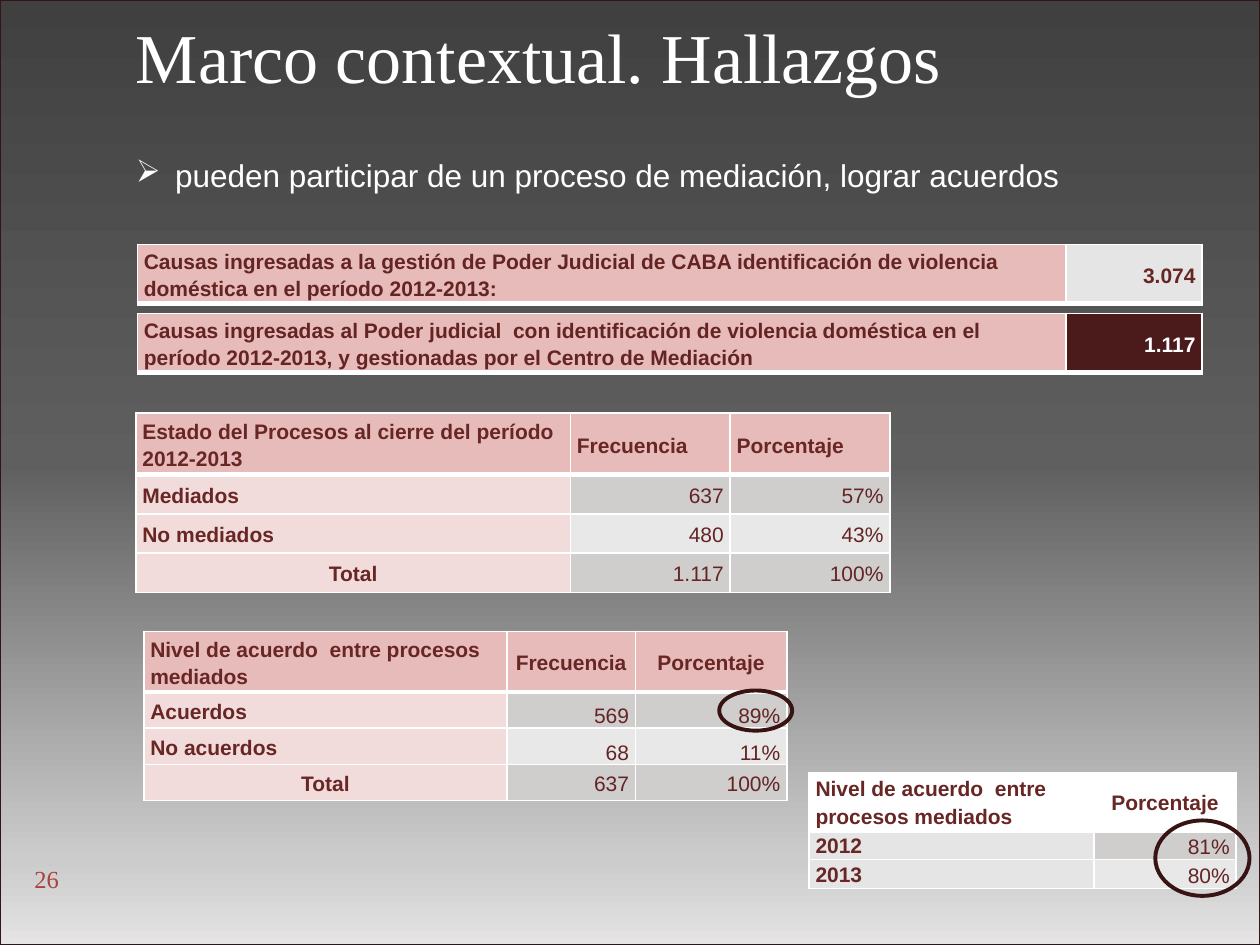
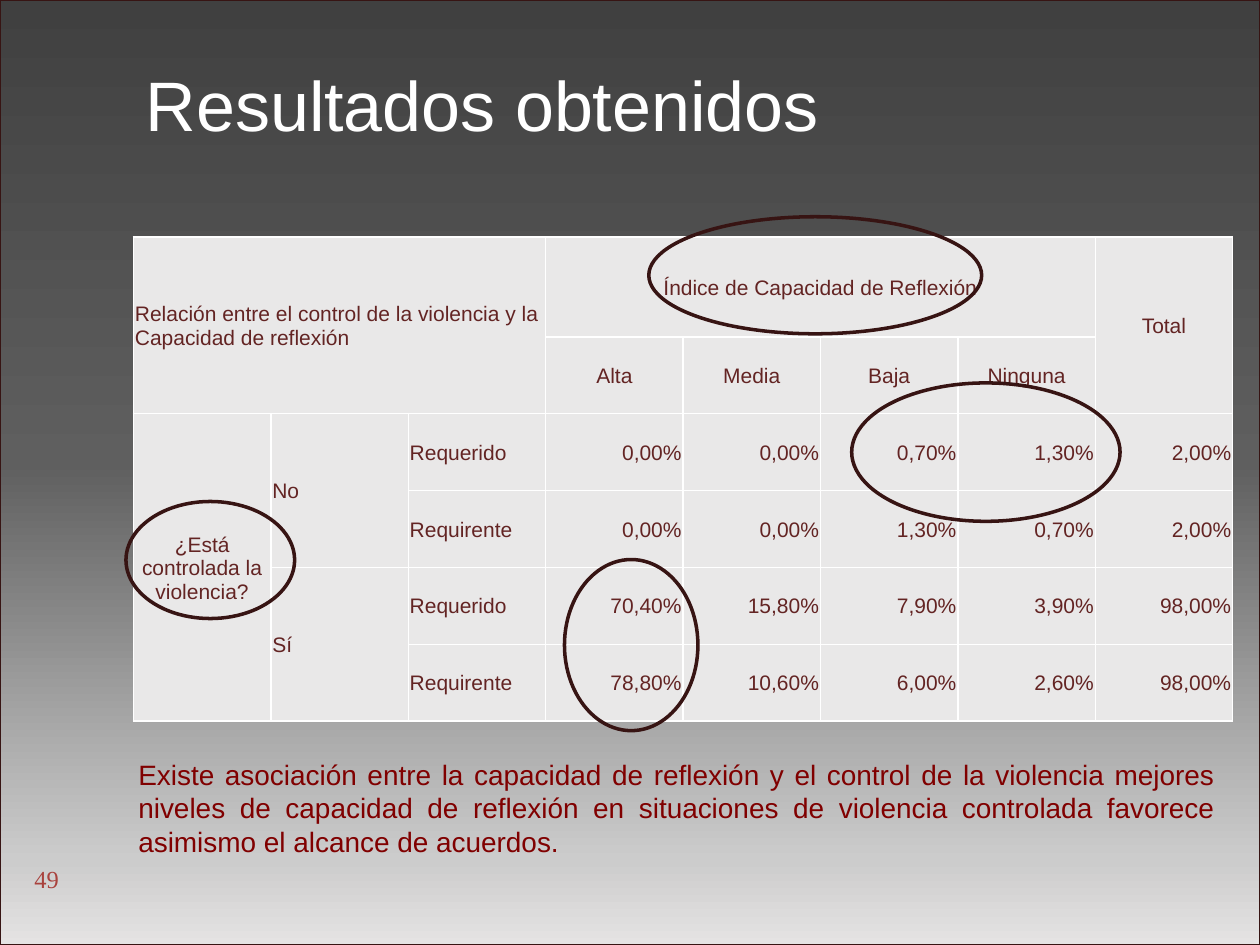
"""Builds two slides of findings: summary tables and a cross table with rings."""
from lxml.etree import SubElement
from pptx import Presentation
from pptx.dml.color import RGBColor
from pptx.enum.shapes import MSO_SHAPE as SHAPE
from pptx.enum.text import MSO_ANCHOR as ANCHOR, PP_ALIGN as ALIGN
from pptx.oxml.ns import qn
from pptx.util import Cm, Pt

WHITE = RGBColor(0xFF, 0xFF, 0xFF)
MAROON = RGBColor(0x63, 0x24, 0x23)
WINE = RGBColor(0x68, 0x26, 0x25)
DARK_WINE = RGBColor(0x4A, 0x1B, 0x1A)
RING = RGBColor(0x37, 0x14, 0x13)
NOTE = RGBColor(0x80, 0x00, 0x00)
PAGE = RGBColor(0xA9, 0x42, 0x3D)
ROSE = RGBColor(0xE6, 0xBB, 0xB9)
PALE_ROSE = RGBColor(0xF2, 0xDC, 0xDB)
SILVER = RGBColor(0xE5, 0xE5, 0xE5)
GREY = RGBColor(0xD0, 0xCD, 0xCD)
PALE_GREY = RGBColor(0xE9, 0xE8, 0xE8)
BACKDROP = [(0, RGBColor(0x40, 0x40, 0x40)), (49, RGBColor(0x5F, 0x5F, 0x5F)),
            (91, RGBColor(0xCC, 0xCC, 0xCC)), (100, RGBColor(0xE5, 0xE3, 0xE3))]
ALIGNS = {"l": ALIGN.LEFT, "c": ALIGN.CENTER, "r": ALIGN.RIGHT}


def add_grid(s, x, y, widths, heights):
    frame = s.shapes.add_table(len(heights), len(widths), Cm(x), Cm(y),
                               Cm(sum(widths)), Cm(sum(heights)))
    table = frame.table
    table.first_row = table.horz_banding = False
    for column, width in zip(table.columns, widths):
        column.width = Cm(width)
    for row, height in zip(table.rows, heights):
        row.height = Cm(height)
    return table


def style_cell(cell, text, fill, color, align="l", bold=False, bottom=1,
               anchor=ANCHOR.MIDDLE, side=0.13, top=0, spacing=1.15):
    cell.margin_left = cell.margin_right = Cm(side)
    cell.margin_top, cell.margin_bottom = Cm(top), 0
    cell.vertical_anchor = anchor
    tc_pr = cell._tc.get_or_add_tcPr()
    for edge, width in (("L", 1), ("R", 1), ("T", 1), ("B", bottom)):
        ln = SubElement(tc_pr, qn("a:ln" + edge), w=str(Pt(width)))
        SubElement(SubElement(ln, qn("a:solidFill")), qn("a:srgbClr"), val=str(WHITE))
    cell.fill.solid()
    cell.fill.fore_color.rgb = fill
    p = cell.text_frame.paragraphs[0]
    p.text = text
    p.alignment = ALIGNS[align]
    p.line_spacing = spacing
    p.font.size = Pt(12)
    for r in p.runs:
        r.font.size, r.font.name, r.font.bold = Pt(12), "Arial", bold
        r.font.color.rgb = color


prs = Presentation()
prs.slide_width, prs.slide_height = Cm(25.4), Cm(19.05)
findings, results = [prs.slides.add_slide(prs.slide_layouts[6]) for _ in range(2)]

for s, number in ((findings, "26"), (results, "49")):
    sp = s.shapes.add_shape(SHAPE.RECTANGLE, 0, 0, prs.slide_width, prs.slide_height)
    sp.shadow.inherit = False
    sp.line.color.rgb, sp.line.width = RING, Pt(1)
    sp.fill.gradient()
    sp.fill.gradient_angle = 270
    stops = sp._element.spPr.find(".//" + qn("a:gsLst"))
    stops.clear()
    for position, color in BACKDROP:
        stop = SubElement(stops, qn("a:gs"), pos=str(position * 1000))
        SubElement(stop, qn("a:srgbClr"), val=str(color))

    sp = s.shapes.add_shape(SHAPE.OVAL, Cm(0.51), Cm(17.09), Cm(1.27), Cm(1.27))
    sp.shadow.inherit = False
    sp.fill.background()
    sp.line.fill.background()
    tf = sp.text_frame
    tf.margin_left = tf.margin_right = tf.margin_top = tf.margin_bottom = 0
    tf.vertical_anchor = ANCHOR.MIDDLE
    p = tf.paragraphs[0]
    p.text = number
    p.alignment = ALIGN.LEFT
    r = p.runs[0]
    r.font.size, r.font.name, r.font.color.rgb = Pt(14), "Times New Roman", PAGE

texts = [
    (findings, 2.49, 0.15, 20.8, 1.96, "Marco contextual. Hallazgos",
     40, "Times New Roman", WHITE, ALIGN.LEFT, False),
    (findings, 2.49, 3.02, 19.81, 1.02,
     "pueden participar de un proceso de mediación, lograr acuerdos",
     18, "Arial", WHITE, ALIGN.LEFT, True),
    (results, 2.69, 1.12, 20.8, 1.96, "Resultados obtenidos",
     40, "Arial", WHITE, ALIGN.LEFT, False),
    (results, 2.54, 15.14, 22.2, 2.79,
     "Existe asociación entre la capacidad de reflexión y el control de la violencia "
     "mejores niveles de capacidad de reflexión en situaciones de violencia controlada "
     "favorece asimismo el alcance de acuerdos.",
     16, "Arial", NOTE, ALIGN.JUSTIFY, False),
]
for s, x, y, w, h, text, size, font, color, align, bullet in texts:
    tf = s.shapes.add_textbox(Cm(x), Cm(y), Cm(w), Cm(h)).text_frame
    tf.word_wrap = True
    p = tf.paragraphs[0]
    p.text = text
    p.alignment = align
    if bullet:
        p_pr = p._p.get_or_add_pPr()
        p_pr.set("marL", str(Cm(0.79)))
        p_pr.set("indent", str(-Cm(0.79)))
        SubElement(p_pr, qn("a:buChar"), char="➢")
    r = p.runs[0]
    r.font.size, r.font.name, r.font.color.rgb = Pt(size), font, color

cases = [
    (4.93, "Causas ingresadas a la gestión de Poder Judicial de CABA identificación "
     "de violencia doméstica en el período 2012-2013:", "3.074", SILVER, WINE),
    (6.32, "Causas ingresadas al Poder judicial  con identificación de violencia doméstica "
     "en el período 2012-2013, y gestionadas por el Centro de Mediación",
     "1.117", DARK_WINE, WHITE),
]
for y, label, count, fill, color in cases:
    table = add_grid(findings, 2.77, y, [18.72, 2.74], [1.19])
    style_cell(table.cell(0, 0), label, ROSE, MAROON, bold=True, bottom=3)
    style_cell(table.cell(0, 1), count, fill, color, "r", bold=True, bottom=3)

AGREEMENT = "Nivel de acuerdo  entre procesos mediados"
summaries = [
    (2.74, 8.33, [8.76, 3.22, 3.22], [1.24] + [0.79] * 3, ROSE, PALE_ROSE, "l", ANCHOR.MIDDLE,
     [["Estado del Procesos al cierre del período 2012-2013", "Frecuencia", "Porcentaje"],
      ["Mediados", "637", "57%"],
      ["No mediados", "480", "43%"],
      ["Total", "1.117", "100%"]]),
    (2.9, 12.73, [7.32, 2.59, 3.05], [1.22] + [0.73] * 3, ROSE, PALE_ROSE, "c", ANCHOR.BOTTOM,
     [[AGREEMENT, "Frecuencia", "Porcentaje"],
      ["Acuerdos", "569", "89%"],
      ["No acuerdos", "68", "11%"],
      ["Total", "637", "100%"]]),
    (16.31, 15.57, [5.74, 2.87], [1.1, 0.54, 0.54], WHITE, SILVER, "c", ANCHOR.BOTTOM,
     [[AGREEMENT, "Porcentaje"], ["2012", "81%"], ["2013", "80%"]]),
]
for x, y, widths, heights, head_fill, label_fill, head_align, anchor, rows in summaries:
    table = add_grid(findings, x, y, widths, heights)
    for i, row in enumerate(rows):
        is_total = row[0] == "Total"
        for j, text in enumerate(row):
            cell = table.cell(i, j)
            if i == 0:
                style_cell(cell, text, head_fill, WINE, head_align if j else "l",
                           bold=True, bottom=3)
            elif j == 0:
                style_cell(cell, text, label_fill, WINE, "c" if is_total else "l", bold=True)
            else:
                style_cell(cell, text, GREY if i % 2 else PALE_GREY, MAROON, "r",
                           anchor=ANCHOR.MIDDLE if is_total else anchor)

cross_rows = [
    ["Relación entre el control de la violencia y la Capacidad de reflexión", "", "",
     "Índice de Capacidad de Reflexión", "", "", "", "Total"],
    ["", "", "", "Alta", "Media", "Baja", "Ninguna", ""],
    ["¿Está controlada la violencia?", "No", "Requerido",
     "0,00%", "0,00%", "0,70%", "1,30%", "2,00%"],
    ["", "", "Requirente", "0,00%", "0,00%", "1,30%", "0,70%", "2,00%"],
    ["", "Sí", "Requerido", "70,40%", "15,80%", "7,90%", "3,90%", "98,00%"],
    ["", "", "Requirente", "78,80%", "10,60%", "6,00%", "2,60%", "98,00%"],
]
cross_aligns = ["lllccccc"] * 2 + ["cllrrrrr"] * 4
table = add_grid(results, 2.69, 4.78, [2.77] * 8, [2.01] + [1.55] * 5)
for i, (row, aligns) in enumerate(zip(cross_rows, cross_aligns)):
    for j, (text, align) in enumerate(zip(row, aligns)):
        style_cell(table.cell(i, j), text, PALE_GREY, MAROON, align,
                   side=0.03, top=0.03, spacing=1.0)
for first, last in (((0, 0), (1, 2)), ((0, 3), (0, 6)), ((0, 7), (1, 7)),
                    ((2, 0), (5, 0)), ((2, 1), (3, 1)), ((4, 1), (5, 1))):
    table.cell(*first).merge(table.cell(*last))

rings = [
    (findings, 14.5, 13.92, 1.47, 0.81, 2.25),
    (findings, 23.29, 16.54, 1.9, 1.52, 2.25),
    (results, 17.17, 7.72, 5.41, 2.79, 2),
    (results, 13.08, 4.37, 6.71, 2.36, 2),
    (results, 2.54, 10.11, 3.4, 2.36, 2),
    (results, 11.38, 11.28, 2.69, 3.45, 2),
]
for s, x, y, w, h, weight in rings:
    sp = s.shapes.add_shape(SHAPE.OVAL, Cm(x), Cm(y), Cm(w), Cm(h))
    sp.shadow.inherit = False
    sp.fill.background()
    sp.line.color.rgb, sp.line.width = RING, Pt(weight)

prs.save("out.pptx")
